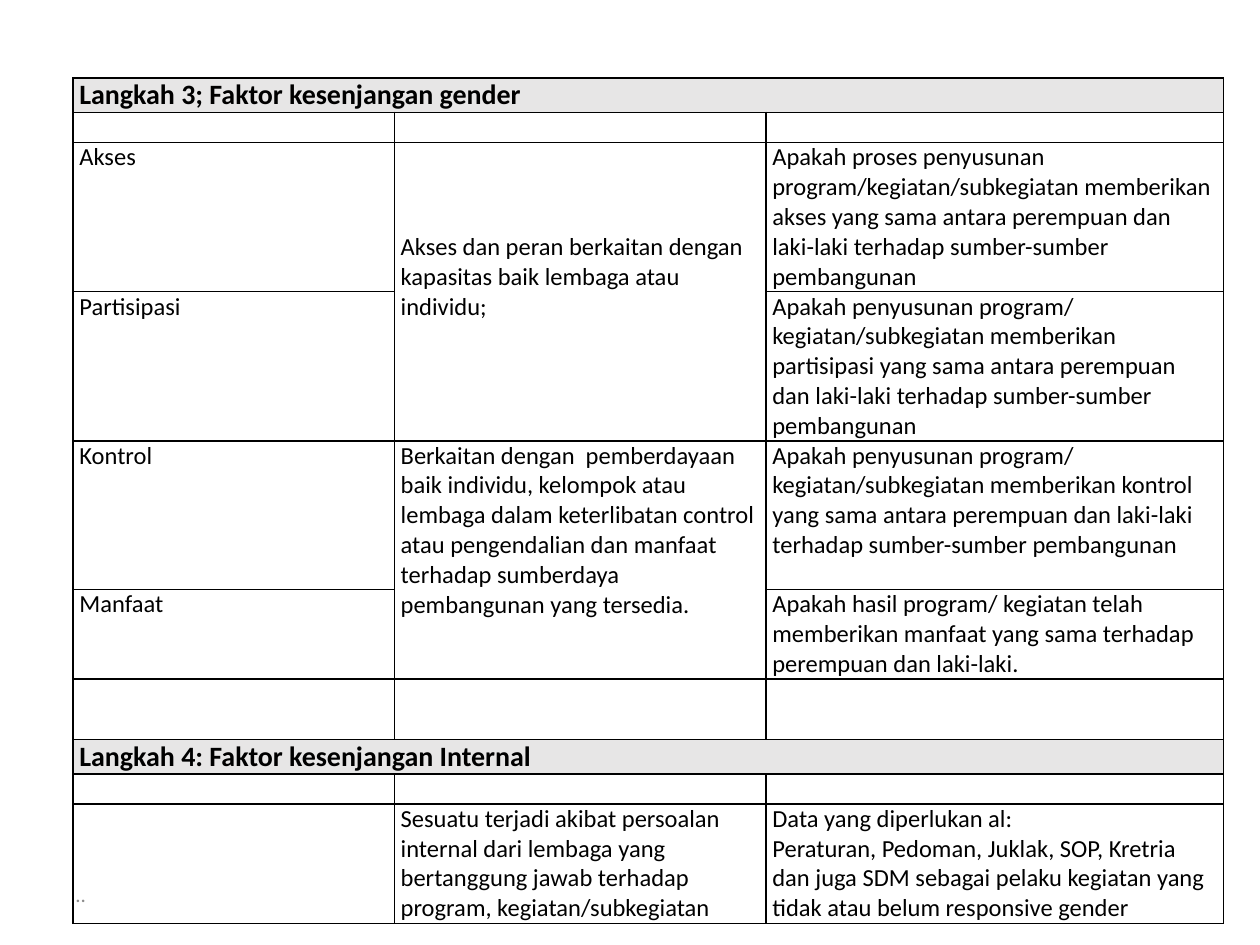
from lxml import etree
from pptx import Presentation
from pptx.dml.color import RGBColor
from pptx.enum import text
from pptx.oxml.ns import qn
from pptx.util import Inches, Pt

BLACK = RGBColor(0, 0, 0)
WHITE = RGBColor(255, 255, 255)
GREY = RGBColor(0xE7, 0xE6, 0xE6)
DIM = RGBColor(0x8C, 0x8C, 0x8C)

COLS = [2.55, 2.95, 3.63]
BLANK = ["", "", ""]
# Each row: height in inches, then its three cells
ROWS = [
    (0.27, ["Langkah 3; Faktor kesenjangan gender", "", ""]),
    (0.24, BLANK),
    (1.18, ["Akses",
            "Akses dan peran berkaitan dengan kapasitas baik lembaga atau individu;",
            "Apakah proses penyusunan program/kegiatan/subkegiatan memberikan akses "
            "yang sama antara perempuan dan laki-laki terhadap sumber-sumber pembangunan"]),
    (1.18, ["Partisipasi", "",
            "Apakah penyusunan program/\nkegiatan/subkegiatan memberikan partisipasi "
            "yang sama antara perempuan dan laki-laki terhadap sumber-sumber pembangunan"]),
    (1.18, ["Kontrol",
            "Berkaitan dengan  pemberdayaan baik individu, kelompok atau lembaga dalam "
            "keterlibatan control atau pengendalian dan manfaat terhadap sumberdaya "
            "pembangunan yang tersedia.",
            "Apakah penyusunan program/ kegiatan/subkegiatan memberikan kontrol "
            "yang sama antara perempuan dan laki-laki terhadap sumber-sumber pembangunan"]),
    (0.71, ["Manfaat", "",
            "Apakah hasil program/ kegiatan telah memberikan manfaat yang sama "
            "terhadap perempuan dan laki-laki."]),
    (0.48, BLANK),
    (0.27, ["Langkah 4: Faktor kesenjangan Internal", "", ""]),
    (0.24, BLANK),
    (0.94, ["",
            "Sesuatu terjadi akibat persoalan internal dari lembaga yang bertanggung "
            "jawab terhadap program, kegiatan/subkegiatan",
            "Data yang diperlukan al:\nPeraturan, Pedoman, Juklak, SOP, Kretria dan juga "
            "SDM sebagai pelaku kegiatan yang tidak atau belum responsive gender"]),
]
HEADS = (0, 7)


def fill_cell(cell, words, head):
    cell.margin_left = cell.margin_right = Inches(0.05)
    cell.margin_top = cell.margin_bottom = 0
    cell.text_frame.text = words
    size = 16 if head else 14
    for para in cell.text_frame.paragraphs:
        for run in para.runs:
            font = run.font
            font.name, font.size, font.bold = "Calibri", Pt(size), head
            font.color.rgb = BLACK
        if not para.runs:
            etree.SubElement(para._p, qn("a:endParaRPr"), sz=str(size * 100))
    props = cell._tc.get_or_add_tcPr()
    for side in ("L", "R", "T", "B"):
        line = etree.SubElement(props, qn("a:ln" + side), w=str(Pt(1)))
        paint = etree.SubElement(line, qn("a:solidFill"))
        etree.SubElement(paint, qn("a:srgbClr"), val=str(BLACK))
    cell.fill.solid()
    cell.fill.fore_color.rgb = GREY if head else WHITE


prs = Presentation()
prs.slide_width, prs.slide_height = Inches(10), Inches(7.5)
slide = prs.slides.add_slide(prs.slide_layouts[6])

table = slide.shapes.add_table(
    len(ROWS), len(COLS), Inches(0.58), Inches(0.62),
    Inches(sum(COLS)), Inches(sum(high for high, _ in ROWS))).table
table.first_row = table.horz_banding = False
for col, wide in zip(table.columns, COLS):
    col.width = Inches(wide)
for r, (high, cells) in enumerate(ROWS):
    table.rows[r].height = Inches(high)
    for c, words in enumerate(cells):
        fill_cell(table.cell(r, c), words, r in HEADS)

for r in HEADS:
    table.cell(r, 0).merge(table.cell(r, 2))
for r in (2, 4):
    table.cell(r, 1).merge(table.cell(r + 1, 1))
access = table.cell(2, 1)
access.vertical_anchor = text.MSO_ANCHOR.MIDDLE
access.margin_bottom = Inches(0.23)

foot = slide.shapes.add_textbox(Inches(0.5), Inches(6.95), Inches(2.33), Inches(0.3))
frame = foot.text_frame
frame.word_wrap = True
frame.vertical_anchor = text.MSO_ANCHOR.MIDDLE
frame.text = ".."
font = frame.paragraphs[0].runs[0].font
font.name, font.size = "Calibri", Pt(12)
font.color.rgb = DIM

prs.save("out.pptx")
